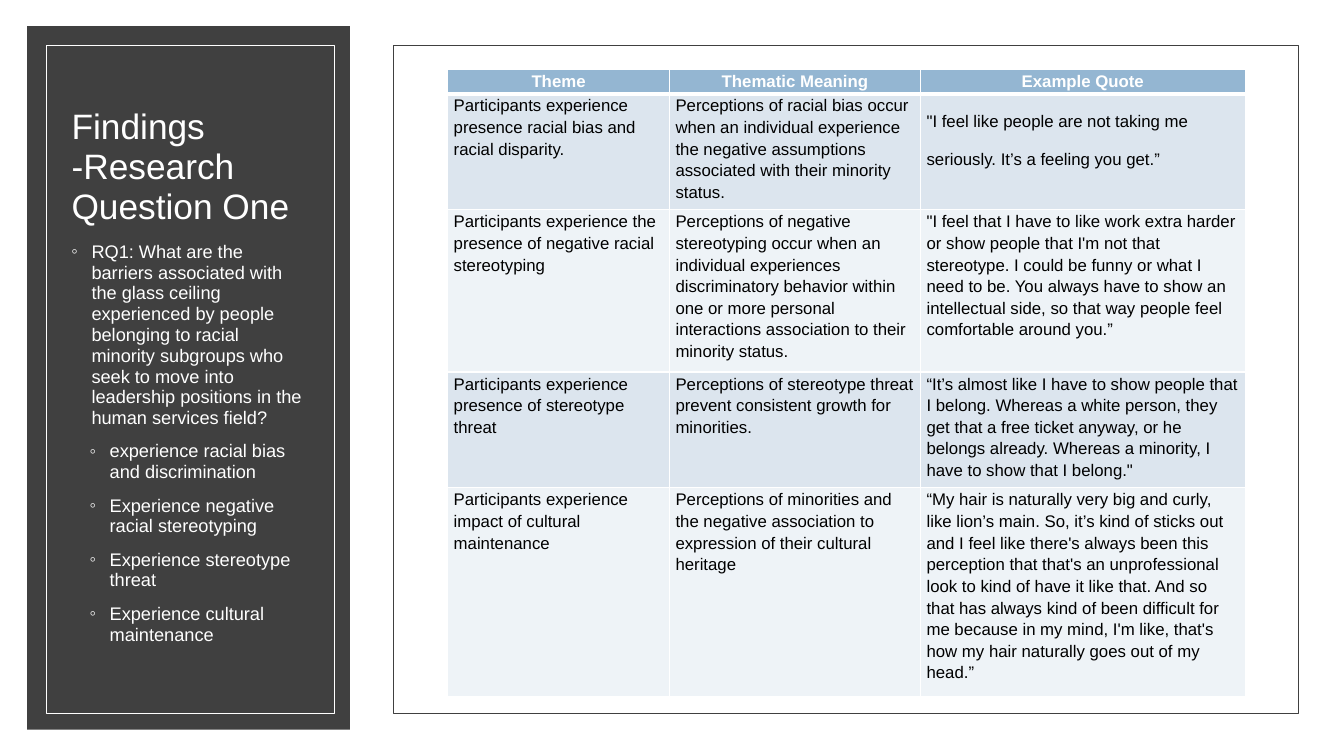
from dataclasses import dataclass

from lxml.etree import SubElement
from pptx import Presentation
from pptx.dml.color import RGBColor
from pptx.enum.shapes import MSO_SHAPE
from pptx.enum.text import MSO_ANCHOR, MSO_AUTO_SIZE, PP_ALIGN
from pptx.oxml.ns import qn
from pptx.util import Inches, Pt


@dataclass(frozen=True)
class Theme:
    """Colours, font and type sizes of the slide."""
    font: str = "Arial"
    white: str = "FFFFFF"
    black: str = "000000"
    dark: str = "404040"
    head: str = "94B6D2"
    bands: tuple = ("DCE5EE", "EEF3F7")
    title: float = 25.2
    body: float = 13
    cell: float = 12


THEME = Theme()

TITLE = "Findings\v-Research Question One"
POINTS = [
    (0.2, "RQ1: What are the barriers associated with the glass ceiling experienced by people "
          "belonging to racial minority subgroups who seek to move into leadership positions "
          "in the human services field?"),
    (0.38, "experience racial bias and discrimination"),
    (0.38, "Experience negative racial stereotyping"),
    (0.38, "Experience stereotype threat"),
    (0.38, "Experience cultural maintenance"),
]
COLS = [2.2, 2.49, 3.22]
ROWS = [0.24, 0.86, 1.07, 0.86, 1.93]
CELLS = [
    ("Theme", "Thematic Meaning", "Example Quote"),
    ("Participants experience presence racial bias and racial disparity.",
     "Perceptions of racial bias occur when an individual experience the negative assumptions "
     "associated with their minority status.",
     "\"I feel like people are not taking me seriously. It’s a feeling you get.”"),
    ("Participants experience the presence of negative racial stereotyping",
     "Perceptions of negative stereotyping occur when an individual experiences discriminatory "
     "behavior within one or more personal interactions association to their minority status.",
     "\"I feel that I have to like work extra harder or show people that I'm not that "
     "stereotype. I could be funny or what I need to be. You always have to show an "
     "intellectual side, so that way people feel comfortable around you.”"),
    ("Participants experience presence of stereotype threat",
     "Perceptions of stereotype threat prevent consistent growth for minorities.",
     "“It’s almost like I have to show people that I belong. Whereas a white person, they get "
     "that a free ticket anyway, or he belongs already. Whereas a minority, I have to show "
     "that I belong.\""),
    ("Participants experience impact of cultural maintenance",
     "Perceptions of minorities and the negative association to expression of their cultural "
     "heritage",
     "“My hair is naturally very big and curly, like lion’s main. So, it’s kind of sticks out "
     "and I feel like there's always been this perception that that's an unprofessional look "
     "to kind of have it like that. And so that has always kind of been difficult for me "
     "because in my mind, I'm like, that's how my hair naturally goes out of my head.”"),
]


def color(code):
    """Turn a hex code into a colour."""
    return RGBColor.from_string(code)


def panel(slide, box, fill=None, line=None):
    """Draw a plain rectangle with an optional fill and thin line."""
    rect = slide.shapes.add_shape(MSO_SHAPE.RECTANGLE, *map(Inches, box))
    rect.shadow.inherit = False
    if fill:
        rect.fill.solid()
        rect.fill.fore_color.rgb = color(fill)
    else:
        rect.fill.background()
    if line:
        rect.line.color.rgb = color(line)
        rect.line.width = Pt(0.5)
    else:
        rect.line.fill.background()


def style(para, size, code, space, bold=False):
    """Format a paragraph and its runs."""
    para.line_spacing = space
    for run in para.runs:
        run.font.name = THEME.font
        run.font.size = Pt(size)
        run.font.bold = bold
        run.font.color.rgb = color(code)


def bullet(para, left):
    """Give a paragraph a hanging ring bullet."""
    props = para._p.get_or_add_pPr()
    props.set("marL", str(Inches(left)))
    props.set("indent", str(Inches(-0.2)))
    tint = SubElement(props, qn("a:buClr"))
    SubElement(tint, qn("a:srgbClr"), val=THEME.white)
    SubElement(props, qn("a:buFont"), typeface=THEME.font)
    SubElement(props, qn("a:buChar"), char="◦")


def sidebar(slide, box):
    """Place the dark panel with the title and the research question."""
    x, y, w, h = box
    panel(slide, box, fill=THEME.dark)
    panel(slide, (x + 0.19, y + 0.19, w - 0.34, h - 0.35), line=THEME.white)

    title = slide.shapes.title
    title.element.getparent().append(title.element)
    title.left, title.top = Inches(x + 0.34), Inches(y + 0.41)
    title.width, title.height = Inches(2.53), Inches(1.64)
    frame = title.text_frame
    frame.text = TITLE
    frame.word_wrap = True
    frame.auto_size = MSO_AUTO_SIZE.NONE
    frame.vertical_anchor = MSO_ANCHOR.BOTTOM
    frame.paragraphs[0].alignment = PP_ALIGN.LEFT
    style(frame.paragraphs[0], THEME.title, THEME.white, 0.95)

    note = slide.shapes.add_textbox(
        Inches(x + 0.34), Inches(y + 2.09), Inches(2.53), Inches(4.22))
    frame = note.text_frame
    frame.word_wrap = True
    frame.text = "\n".join(text for _, text in POINTS)
    for para, (left, _) in zip(frame.paragraphs, POINTS):
        style(para, THEME.body, THEME.white, 0.95)
        para.space_before = Pt(9)
        bullet(para, left)


def border(cell, low):
    """Rule a cell in white, with its bottom line as wide as given."""
    props = cell._tc.get_or_add_tcPr()
    for spot, (side, size) in enumerate([("L", 1), ("R", 1), ("T", 1), ("B", low)]):
        line = SubElement(props, qn(f"a:ln{side}"), w=str(Pt(size)))
        fill = SubElement(line, qn("a:solidFill"))
        SubElement(fill, qn("a:srgbClr"), val=THEME.white)
        props.insert(spot, line)


def themes(slide, box):
    """Place the framed table of themes, meanings and quotes."""
    x, y, w, h = box
    panel(slide, box, line=THEME.dark)
    frame = slide.shapes.add_table(
        len(ROWS), len(COLS), Inches(x + 0.54), Inches(y + 0.24), Inches(7.92), Inches(6.16))
    table = frame.table
    for col, width in zip(table.columns, COLS):
        col.width = Inches(width)
    for row, height in zip(table.rows, ROWS):
        row.height = Inches(height)
    frame.height = Inches(6.16)
    for i, texts in enumerate(CELLS):
        head = i == 0
        for j, text in enumerate(texts):
            cell = table.cell(i, j)
            cell.text = text
            cell.margin_left = cell.margin_right = Inches(0.06)
            cell.margin_top = cell.margin_bottom = 0
            cell.fill.solid()
            cell.fill.fore_color.rgb = color(THEME.head if head else THEME.bands[(i - 1) % 2])
            border(cell, 3 if head else 1)
            para = cell.text_frame.paragraphs[0]
            para.alignment = PP_ALIGN.CENTER if head else PP_ALIGN.LEFT
            style(para, THEME.cell, THEME.white if head else THEME.black,
                  2.0 if (i, j) == (1, 2) else 1.15, head)


def main():
    """Build and save the slide."""
    deck = Presentation()
    deck.slide_width, deck.slide_height = Inches(13.33), Inches(7.5)
    slide = deck.slides.add_slide(deck.slide_layouts[5])
    slide.background.fill.solid()
    slide.background.fill.fore_color.rgb = color(THEME.black)
    panel(slide, (0, 0, 13.33, 7.5), fill=THEME.white)
    sidebar(slide, (0.27, 0.26, 3.2, 6.98))
    themes(slide, (3.9, 0.45, 8.98, 6.63))
    deck.save("out.pptx")


if __name__ == "__main__":
    main()
